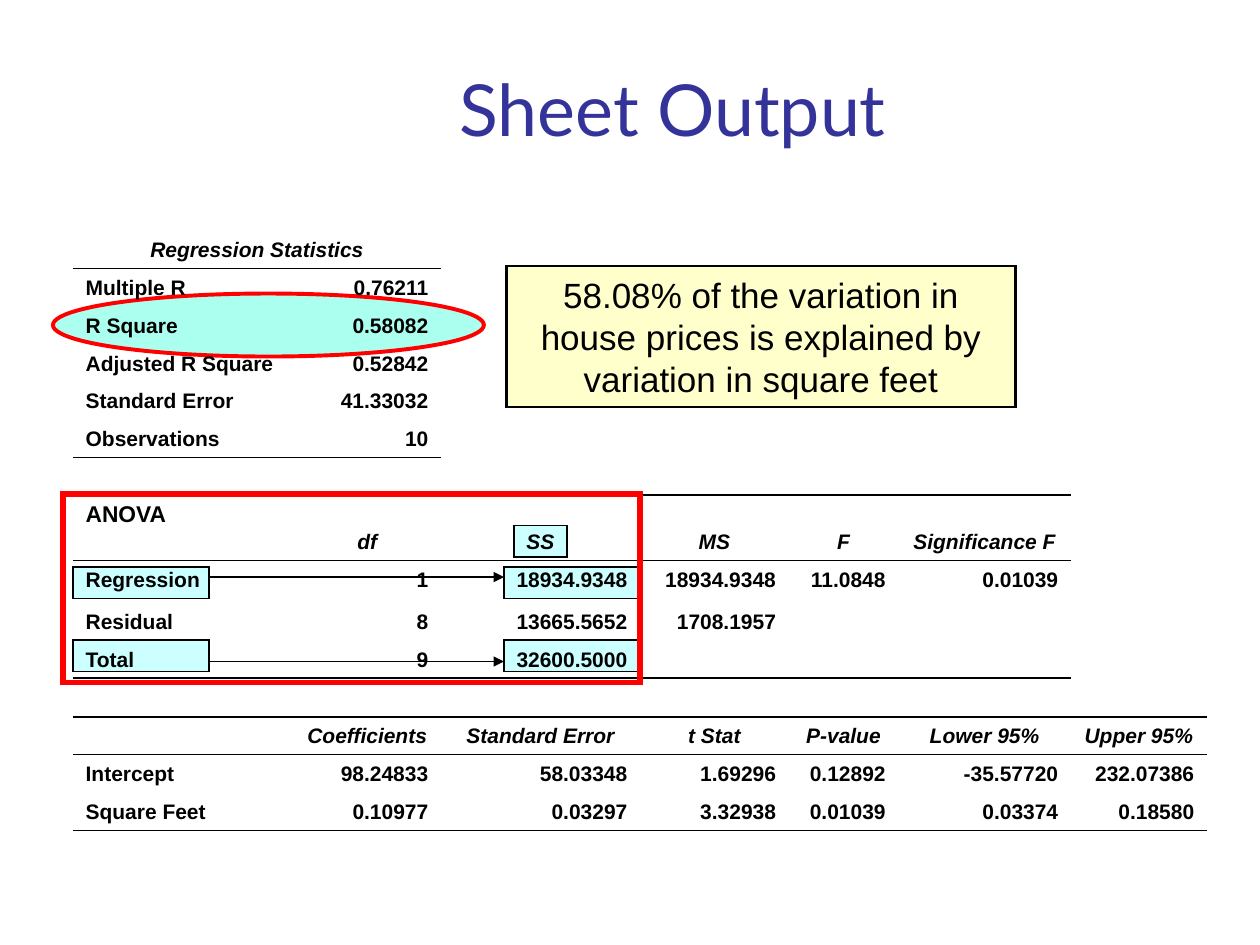
import pptx
import pptx.dml.color
import pptx.enum.shapes
import pptx.enum.text
import pptx.oxml
import pptx.oxml.ns
import pptx.util

ALIGN = pptx.enum.text.PP_ALIGN
ANCHOR = pptx.enum.text.MSO_ANCHOR
SHAPE = pptx.enum.shapes.MSO_SHAPE
Inches, Pt = pptx.util.Inches, pptx.util.Pt
NAMESPACE = pptx.oxml.ns.nsdecls("a")
NO_STYLE_NO_GRID = "{2D5ABB26-0587-4C30-8999-92F81FD0307C}"
BLACK, RED, PALE_BLUE = "000000", "FF0000", "CCFFFF"

# Table grid, in inches
TABLE_LEFT, TABLE_TOP = 0.58, 1.83
COLUMN_WIDTHS = [1.75, 1.17, 1.58, 1.18, 0.87, 1.37, 1.08]
ROW_HEIGHTS = [0.3] * 7 + [0.52, 0.3, 0.33, 0.3, 0.31] + [0.3] * 3
HEADER_ROWS = (0, 7, 12)
ANOVA_ROW = 7
# Row index -> number of columns ruled along its bottom edge
RULES = {0: 2, 5: 2, 6: 6, 7: 6, 10: 6, 11: 7, 12: 7, 14: 7}

ROWS = [
    ["Regression Statistics"],
    ["Multiple R", "0.76211"],
    ["R Square", "0.58082"],
    ["Adjusted R Square", "0.52842"],
    ["Standard Error", "41.33032"],
    ["Observations", "10"],
    [],
    ["ANOVA", "df", "SS", "MS", "F", "Significance F"],
    ["Regression", "1", "18934.9348", "18934.9348", "11.0848", "0.01039"],
    ["Residual", "8", "13665.5652", "1708.1957"],
    ["Total", "9", "32600.5000"],
    [],
    ["", "Coefficients", "Standard Error", "t Stat", "P-value", "Lower 95%", "Upper 95%"],
    ["Intercept", "98.24833", "58.03348", "1.69296", "0.12892", "-35.57720", "232.07386"],
    ["Square Feet", "0.10977", "0.03297", "3.32938", "0.01039", "0.03374", "0.18580"],
]


def color(value):
    return pptx.dml.color.RGBColor.from_string(value)


def add_text(paragraph, text, size, font="Arial", ink=BLACK, bold=False, italic=False,
             align=ALIGN.CENTER):
    paragraph.alignment = align
    run = paragraph.add_run()
    run.text = text
    run.font.name, run.font.size = font, Pt(size)
    run.font.bold, run.font.italic = bold, italic
    run.font.color.rgb = color(ink)


def add_box(slide, kind, box, fill=None, line=BLACK, width=0.75):
    shape = slide.shapes.add_shape(kind, *map(Inches, box))
    shape.shadow.inherit = False
    if fill:
        shape.fill.solid()
        shape.fill.fore_color.rgb = color(fill)
    else:
        shape.fill.background()
    shape.line.color.rgb = color(line)
    shape.line.width = Pt(width)
    # Square corners
    shape.line._get_or_add_ln().append(
        pptx.oxml.parse_xml(f'<a:miter {NAMESPACE} lim="800000"/>'))
    return shape


def add_arrow(slide, start, end, y):
    arrow = slide.shapes.add_connector(
        pptx.enum.shapes.MSO_CONNECTOR.STRAIGHT, Inches(start), Inches(y), Inches(end), Inches(y))
    arrow.line.color.rgb = color(BLACK)
    arrow.line.width = Pt(0.75)
    arrow.line._get_or_add_ln().append(
        pptx.oxml.parse_xml(f'<a:tailEnd {NAMESPACE} type="triangle"/>'))
    arrow._element.spPr.append(pptx.oxml.parse_xml(f"<a:effectLst {NAMESPACE}/>"))


def set_borders(cell, ruled_sides):
    """Rule the named edges (L, R, T, B) of a cell and clear the others."""
    properties = cell._tc.get_or_add_tcPr()
    for position, side in enumerate("LRTB"):
        paint = (f'<a:solidFill><a:srgbClr val="{BLACK}"/></a:solidFill>'
                 if side in ruled_sides else "<a:noFill/>")
        properties.insert(position, pptx.oxml.parse_xml(
            f'<a:ln{side} {NAMESPACE} w="{Pt(1)}">{paint}</a:ln{side}>'))


def fill_cell(cell, text, row, column):
    cell.fill.background()
    cell.vertical_anchor = ANCHOR.BOTTOM
    paragraph = cell.text_frame.paragraphs[0]
    if not text:
        # Keeps an empty cell from stretching its row
        paragraph._p.append(pptx.oxml.parse_xml(
            f'<a:endParaRPr {NAMESPACE} sz="1200"><a:latin typeface="Arial"/></a:endParaRPr>'))
    elif row == ANOVA_ROW and column == 0:
        cell.vertical_anchor = ANCHOR.TOP
        add_text(paragraph, text, 13, bold=True, align=ALIGN.LEFT)
    elif row in HEADER_ROWS:
        add_text(paragraph, text, 12, bold=True, italic=True)
    else:
        add_text(paragraph, text, 12, bold=True, align=ALIGN.RIGHT if column else ALIGN.LEFT)


def add_statistics_table(slide):
    frame = slide.shapes.add_table(
        len(ROWS), len(COLUMN_WIDTHS), Inches(TABLE_LEFT), Inches(TABLE_TOP),
        Inches(sum(COLUMN_WIDTHS)), Inches(sum(ROW_HEIGHTS)))
    table = frame.table
    table.first_row = table.horz_banding = False
    table._tbl.tblPr.find(pptx.oxml.ns.qn("a:tableStyleId")).text = NO_STYLE_NO_GRID
    for column, width in zip(table.columns, COLUMN_WIDTHS):
        column.width = Inches(width)
    for r, (row, height, values) in enumerate(zip(table.rows, ROW_HEIGHTS, ROWS)):
        row.height = Inches(height)
        for c, cell in enumerate(row.cells):
            fill_cell(cell, values[c] if c < len(values) else "", r, c)
            edges = (("T", r - 1), ("B", r))
            set_borders(cell, [side for side, rule in edges if c < RULES.get(rule, 0)])
    table.cell(0, 0).merge(table.cell(0, 1))


def main():
    presentation = pptx.Presentation()
    presentation.slide_width, presentation.slide_height = Inches(10), Inches(7.5)
    slide = presentation.slides.add_slide(presentation.slide_layouts[5])

    # Title
    title = slide.shapes.title
    title.left, title.top, title.width, title.height = map(Inches, (1.08, 0.42, 8.52, 0.83))
    title.text_frame.vertical_anchor = ANCHOR.BOTTOM
    title.text_frame.auto_size = pptx.enum.text.MSO_AUTO_SIZE.NONE
    add_text(title.text_frame.paragraphs[0], "Sheet Output", 41, "Lato", "333399")

    # Highlights behind the table: labels, sums of squares and R Square
    for top in (5.08, 4.5):
        for left in (TABLE_LEFT, 4):
            add_box(slide, SHAPE.RECTANGLE, (left, top, 1.08, 0.25), PALE_BLUE)
    add_box(slide, SHAPE.RECTANGLE, (4.08, 4.17, 0.42, 0.25), PALE_BLUE)
    add_box(slide, SHAPE.OVAL, (0.42, 2.33, 3.42, 0.5), "ABFFEF", RED, 2.25)

    add_statistics_table(slide)

    # Interpretation
    callout = add_box(slide, SHAPE.RECTANGLE, (4.02, 2.11, 4.04, 1.12), "FFFFCC", width=1.5)
    callout.text_frame.word_wrap = True
    callout.text_frame.vertical_anchor = ANCHOR.MIDDLE
    add_text(callout.text_frame.paragraphs[0],
             "58.08% of the variation in house prices is explained by variation in square feet", 20)

    # Arrows from the labels to their sums of squares, and the frame around them
    for y in (4.58, 5.25):
        add_arrow(slide, 1.67, 4, y)
    add_box(slide, SHAPE.RECTANGLE, (0.5, 3.92, 4.58, 1.5), line=RED, width=3)

    presentation.save("out.pptx")


if __name__ == "__main__":
    main()
